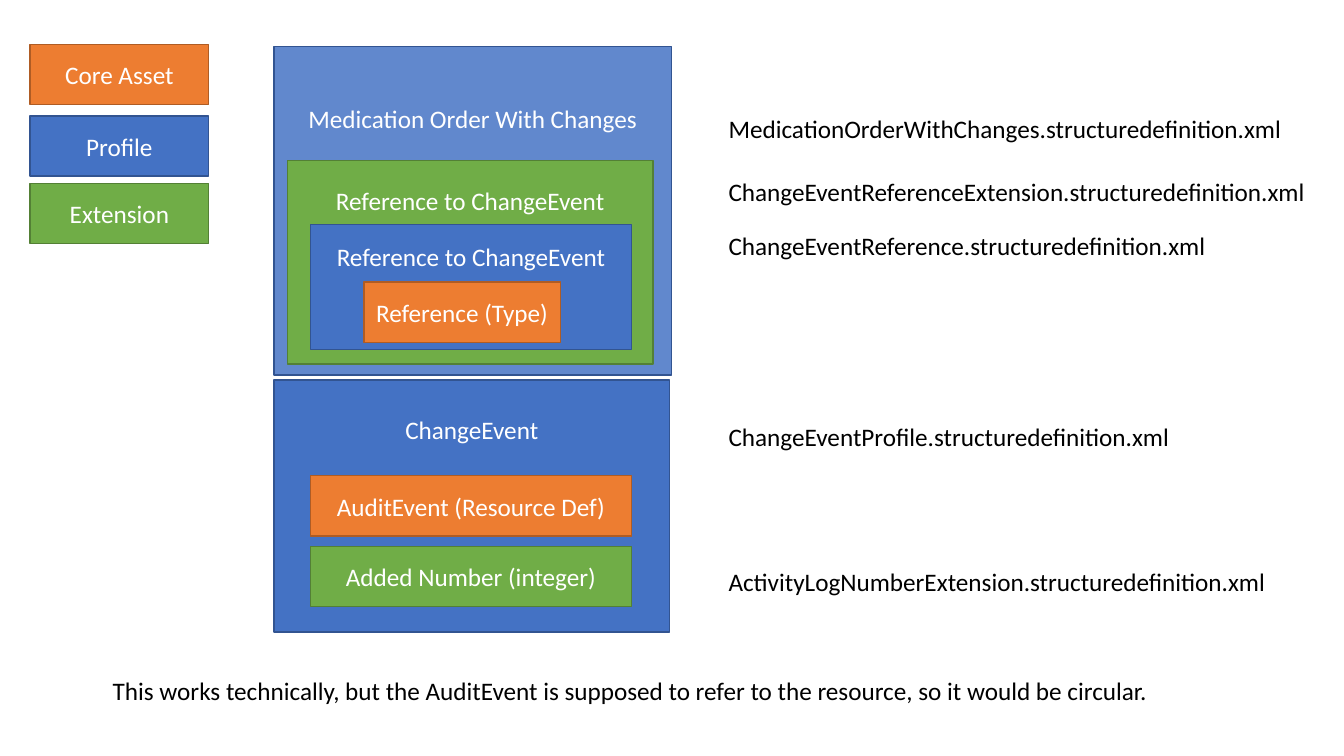
from collections import namedtuple

from pptx import Presentation
from pptx.dml.color import RGBColor
from pptx.enum.shapes import MSO_SHAPE
from pptx.enum.text import MSO_ANCHOR, MSO_AUTO_SIZE, PP_ALIGN
from pptx.util import Cm, Pt

Box = namedtuple("Box", "left top width height")
Style = namedtuple("Style", "fill line")

WHITE = RGBColor(0xFF, 0xFF, 0xFF)
BLACK = RGBColor(0x00, 0x00, 0x00)
CORE_ASSET = Style(RGBColor(0xED, 0x7D, 0x31), RGBColor(0xAF, 0x5C, 0x24))
PROFILE = Style(RGBColor(0x44, 0x72, 0xC4), RGBColor(0x32, 0x54, 0x91))
LIGHT_PROFILE = Style(RGBColor(0x61, 0x88, 0xCD), PROFILE.line)
EXTENSION = Style(RGBColor(0x70, 0xAD, 0x47), RGBColor(0x53, 0x80, 0x35))

BAR_HEIGHT = 1.52
LABEL_HEIGHT = 1.02


def inside(box, left, top, width, height):
    """Return a box whose offsets are measured from the corner of another."""
    return Box(box.left + left, box.top + top, width, height)


def to_lengths(box):
    return [Cm(value) for value in box]


def add_words(para, words, color):
    span = para.add_run()
    span.text = words
    span.font.name = "Calibri"
    span.font.size = Pt(18)
    span.font.color.rgb = color


def add_block(page, box, words, style, title_top=None):
    """Add a filled block; title_top sets the title that far below its top edge."""
    block = page.shapes.add_shape(MSO_SHAPE.RECTANGLE, *to_lengths(box))
    block.shadow.inherit = False
    block.fill.solid()
    block.fill.fore_color.rgb = style.fill
    block.line.color.rgb = style.line
    block.line.width = Pt(1)
    frame = block.text_frame
    frame.word_wrap = True
    frame.vertical_anchor = MSO_ANCHOR.MIDDLE
    if title_top is not None:
        frame.vertical_anchor = MSO_ANCHOR.TOP
        frame.margin_top = Cm(title_top)
    para = frame.paragraphs[0]
    para.alignment = PP_ALIGN.CENTER
    add_words(para, words, WHITE)


def add_label(page, box, words):
    frame = page.shapes.add_textbox(*to_lengths(box)).text_frame
    frame.word_wrap = False
    frame.auto_size = MSO_AUTO_SIZE.SHAPE_TO_FIT_TEXT
    add_words(frame.paragraphs[0], words, BLACK)


def add_legend(page, box):
    entries = [
        (0, "Core Asset", CORE_ASSET),
        (1.8, "Profile", PROFILE),
        (3.5, "Extension", EXTENSION),
    ]
    for top, words, style in entries:
        add_block(page, inside(box, 0, top, box.width, BAR_HEIGHT), words, style)


def add_medication_order(page, box):
    add_block(page, box, "Medication Order With Changes", LIGHT_PROFILE, 1.43)
    extension = inside(box, 0.33, 2.87, 9.22, 5.13)
    add_block(page, extension, "Reference to ChangeEvent", EXTENSION, 0.63)
    profile = inside(extension, 0.58, 1.62, 8.1, 3.15)
    add_block(page, profile, "Reference to ChangeEvent", PROFILE, 0.41)
    reference = inside(profile, 1.35, 1.45, 4.95, BAR_HEIGHT)
    add_block(page, reference, "Reference (Type)", CORE_ASSET)


def add_change_event(page, box):
    add_block(page, box, "ChangeEvent", PROFILE, 0.85)
    parts = [
        (2.41, "AuditEvent (Resource Def)", CORE_ASSET),
        (4.19, "Added Number (integer)", EXTENSION),
    ]
    for top, words, style in parts:
        add_block(page, inside(box, 0.91, top, 8.1, BAR_HEIGHT), words, style)


def add_file_names(page, box):
    files = [
        (0, 14.61, "MedicationOrderWithChanges"),
        (1.58, 15.19, "ChangeEventReferenceExtension"),
        (2.95, 12.67, "ChangeEventReference"),
        (7.74, 11.73, "ChangeEventProfile"),
        (11.4, 14.2, "ActivityLogNumberExtension"),
    ]
    for top, width, name in files:
        label = inside(box, 0, top, width, LABEL_HEIGHT)
        add_label(page, label, f"{name}.structuredefinition.xml")


def main():
    deck = Presentation()
    deck.slide_width = Cm(33.87)
    deck.slide_height = Cm(19.05)
    page = deck.slides.add_slide(deck.slide_layouts[6])
    add_legend(page, Box(0.76, 1.12, 4.5, 5.02))
    add_medication_order(page, Box(6.91, 1.17, 10.01, 8.28))
    add_change_event(page, Box(6.91, 9.58, 9.96, 6.35))
    add_file_names(page, Box(18.11, 2.74, 15.19, 12.42))
    add_label(
        page,
        Box(2.59, 16.89, 26.8, LABEL_HEIGHT),
        "This works technically, but the AuditEvent is supposed to refer "
        "to the resource, so it would be circular.",
    )
    deck.save("out.pptx")


if __name__ == "__main__":
    main()
